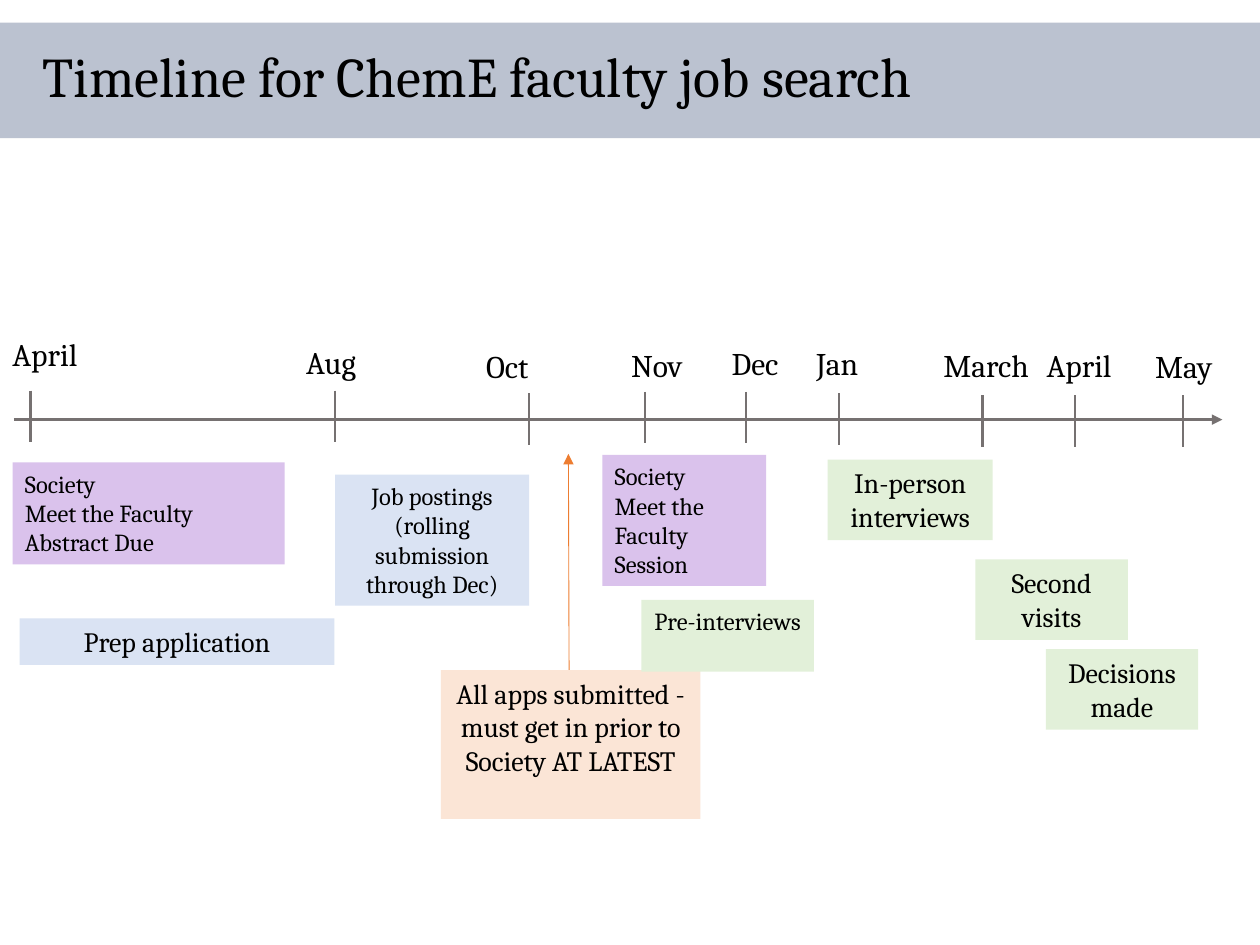
from pptx import Presentation
from pptx.dml.color import RGBColor
from pptx.enum.shapes import MSO_CONNECTOR as CONN, MSO_SHAPE as SHAPE
from pptx.enum.text import MSO_ANCHOR as ANCHOR, PP_ALIGN as ALIGN
from pptx.oxml.ns import qn
from pptx.util import Pt
from lxml.etree import SubElement

FONT = "Cambria"
GRAY, ORANGE = "767171", "ED7D31"
PURPLE, BLUE, PEACH, GREEN = "DAC2EC", "DAE3F3", "FBE5D6", "E2F0D9"
AXIS_Y = 239.8
TICK_LENGTH = 29.5

# name, label left, label top, label width, tick x, tick top
MONTHS = [
    ("April", 0, 188, 120, 17.3, 223.2),
    ("Aug", 167.8, 192.2, 82, 191.5, 223.2),
    ("Oct", 270.7, 195, 66, 302.4, 224.6),
    ("Nov", 353.5, 194.4, 106, 368.6, 223.9),
    ("Dec", 411, 193, 106, 426.2, 223.9),
    ("Jan", 459.4, 193, 52.6, 479.5, 224.6),
    ("March", 532, 194.4, 64, 561.6, 226),
    ("April", 591, 194.4, 64, 614.2, 226),
    ("May", 653, 195, 64, 676, 226),
]

# paragraphs, left, top, width, height, fill, text size, alignment
STAGES = [
    (["Society", "Meet the Faculty Session"], 344.2, 260, 93.6, 74.9, PURPLE, 14, ALIGN.LEFT),
    (["Job postings (rolling submission through Dec)"], 191.5, 271.2, 110.9, 74.9, BLUE, 14, ALIGN.CENTER),
    (["Society", "Meet the Faculty Abstract Due"], 7.2, 264.2, 155.5, 58.3, PURPLE, 14, ALIGN.LEFT),
    (["Prep application"], 11.2, 353.4, 180, 26.6, BLUE, 16, ALIGN.CENTER),
    (["All apps submitted - must get in prior to Society AT LATEST"], 252, 383, 148.3, 85, PEACH, 16, ALIGN.CENTER),
    (["Pre-interviews"], 366.5, 342.8, 98.6, 41, GREEN, 14, ALIGN.CENTER),
    (["In-person interviews"], 473, 262.6, 94.3, 46, GREEN, 16, ALIGN.CENTER),
    (["Second visits"], 557.4, 319.7, 87.1, 46, GREEN, 16, ALIGN.CENTER),
    (["Decisions made"], 597.6, 371, 87.1, 46, GREEN, 16, ALIGN.CENTER),
]


def rgb(color):
    return RGBColor.from_string(color)


def put_text(s, paragraphs, size, align=ALIGN.LEFT, anchor=ANCHOR.TOP, spacing=None):
    tf = s.text_frame
    tf.word_wrap = True
    tf.vertical_anchor = anchor
    for i, text in enumerate(paragraphs):
        p = tf.add_paragraph() if i else tf.paragraphs[0]
        p.alignment = align
        p.line_spacing = spacing
        r = p.add_run()
        r.text = text
        r.font.name = FONT
        r.font.size = Pt(size)
        r.font.color.rgb = rgb("000000")


def add_box(sp, left, top, width, height, fill, opacity=100):
    s = sp.add_shape(SHAPE.RECTANGLE, Pt(left), Pt(top), Pt(width), Pt(height))
    s.shadow.inherit = False
    s.fill.solid()
    s.fill.fore_color.rgb = rgb(fill)
    s.line.fill.background()
    if opacity < 100:
        clr = s._element.spPr.find(qn("a:solidFill"))[0]
        SubElement(clr, qn("a:alpha"), val=str(opacity * 1000))
    return s


def add_label(sp, text, left, top, width, height, size, **style):
    s = sp.add_textbox(Pt(left), Pt(top), Pt(width), Pt(height))
    put_text(s, [text], size, **style)


def add_line(sp, x1, y1, x2, y2, color, weight, arrow=False):
    s = sp.add_connector(CONN.STRAIGHT, Pt(x1), Pt(y1), Pt(x2), Pt(y2))
    s.line.color.rgb = rgb(color)
    s.line.width = Pt(weight)
    if arrow:
        SubElement(s.line._get_or_add_ln(), qn("a:tailEnd"), type="triangle")
    SubElement(s._element.spPr, qn("a:effectLst"))


def main():
    prs = Presentation()
    prs.slide_width, prs.slide_height = Pt(720), Pt(540)
    sp = prs.slides.add_slide(prs.slide_layouts[6]).shapes

    # Title band
    add_box(sp, 0, 13, 720, 66, "203864", opacity=30)
    add_label(sp, "Timeline for ChemE faculty job search", 17.3, 13, 702.7, 65, 32,
              anchor=ANCHOR.MIDDLE, spacing=0.9)

    # Time axis with months
    add_line(sp, 8, AXIS_Y, 698.5, AXIS_Y, GRAY, 1.5, arrow=True)
    for name, left, top, width, x, tick_top in MONTHS:
        add_label(sp, name, left, top, width, 29, 18)
        add_line(sp, x, tick_top, x, tick_top + TICK_LENGTH, GRAY, 1.5)

    # Submission deadline arrow
    add_line(sp, 325.2, 383, 324.8, 259.4, ORANGE, 0.5, arrow=True)

    # Stages of the search
    for paragraphs, left, top, width, height, fill, size, align in STAGES:
        s = add_box(sp, left, top, width, height, fill)
        put_text(s, paragraphs, size, align)

    prs.save("out.pptx")


if __name__ == "__main__":
    main()
